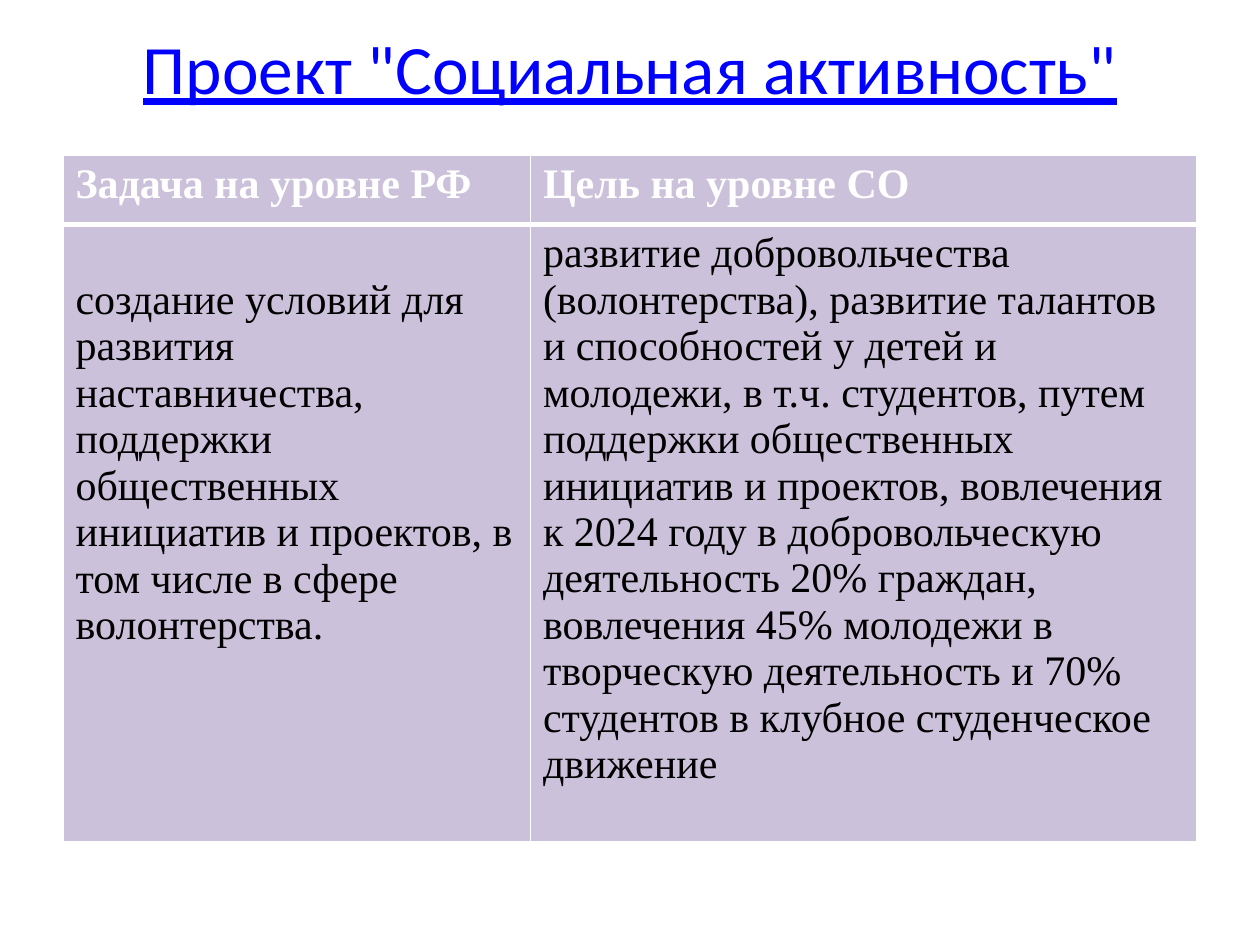
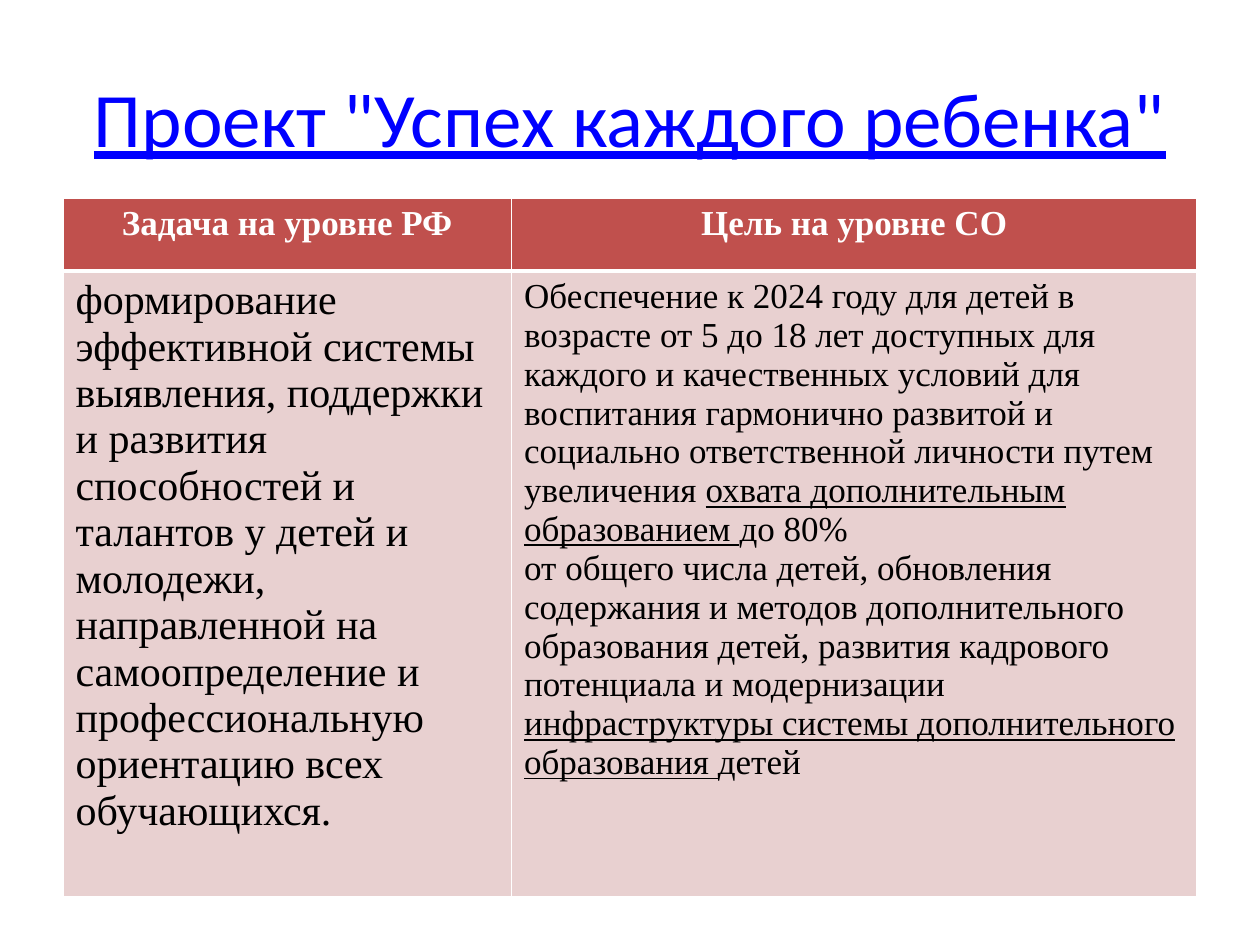
from dataclasses import dataclass

from lxml import etree
from pptx import Presentation
from pptx.dml.color import RGBColor
from pptx.enum.text import MSO_ANCHOR, PP_ALIGN
from pptx.oxml.ns import qn
from pptx.util import Inches, Pt

LEFT, CENTER, JUSTIFY = PP_ALIGN.LEFT, PP_ALIGN.CENTER, PP_ALIGN.JUSTIFY
TOP, MIDDLE = MSO_ANCHOR.TOP, MSO_ANCHOR.MIDDLE


@dataclass(frozen=True)
class Theme:
    title_font: str = "Calibri"
    table_font: str = "Times New Roman"
    title_color: str = "0000FF"
    white: str = "FFFFFF"
    black: str = "000000"
    lilac: str = "CCC1DA"
    red: str = "C0504D"
    pink: str = "E8D0D0"
    large: int = 24
    small: int = 20
    thin_border: int = 1
    header_border: int = 3


THEME = Theme()
SIDE, CONTENT_WIDTH = 0.5, 9
LINE_HEIGHT = 0.37
HEADERS = ["Задача на уровне РФ", "Цель на уровне СО"]

# Each body cell: type size, extra space above, list of (text, underlined)
projects = [
    {
        "title": 'Проект "Социальная активность"',
        "title_size": 39.6, "title_top": 0.2, "title_height": 1.09, "title_anchor": TOP,
        "table_top": 1.23, "columns": [3.71, 5.29], "rows": [0.55, 4.89],
        "header_fill": THEME.lilac, "body_fill": THEME.lilac,
        "header_size": THEME.large, "header_align": JUSTIFY,
        "body": [
            (THEME.large, LINE_HEIGHT, [
                ("создание условий для развития наставничества, поддержки общественных "
                 "инициатив и проектов, в том числе в сфере волонтерства.", False)]),
            (THEME.large, 0, [
                ("развитие добровольчества (волонтерства), развитие талантов и способностей "
                 "у детей и молодежи, в т.ч. студентов, путем поддержки общественных "
                 "инициатив и проектов, вовлечения к 2024 году в добровольческую "
                 "деятельность 20% граждан, вовлечения 45% молодежи в творческую "
                 "деятельность и 70% студентов в клубное студенческое движение", False)]),
        ],
    },
    {
        "title": 'Проект "Успех каждого ребенка"',
        "title_size": 44, "title_top": 0.3, "title_height": 1.25, "title_anchor": MIDDLE,
        "table_top": 1.57, "columns": [3.56, 5.44], "rows": [0.58, 4.97],
        "header_fill": THEME.red, "body_fill": THEME.pink,
        "header_size": THEME.small, "header_align": CENTER,
        "body": [
            (THEME.large, 0, [
                ("формирование эффективной системы выявления, поддержки и развития "
                 "способностей и талантов у детей и молодежи, направленной на "
                 "самоопределение и профессиональную ориентацию всех обучающихся.", False)]),
            (THEME.small, 0, [
                ("Обеспечение к 2024 году для детей в возрасте от 5 до 18 лет доступных для "
                 "каждого и качественных условий для воспитания гармонично развитой и "
                 "социально ответственной личности путем увеличения ", False),
                ("охвата дополнительным образованием ", True),
                ("до 80%\nот общего числа детей, обновления содержания и методов "
                 "дополнительного образования детей, развития кадрового потенциала и "
                 "модернизации ", False),
                ("инфраструктуры системы дополнительного образования ", True),
                ("детей", False)]),
        ],
    },
]


def write(paragraph, pieces, font, size, color, align, bold=False):
    """Add (text, underlined) pieces as runs; a newline becomes a line break."""
    paragraph.alignment = align
    for text, underlined in pieces:
        for index, line in enumerate(text.split("\n")):
            if index:
                paragraph.add_line_break()
            run = paragraph.add_run()
            run.text = line
            run.font.name = font
            run.font.size = Pt(size)
            run.font.bold = bold
            run.font.underline = underlined
            run.font.color.rgb = RGBColor.from_string(color)


def style_cell(cell, fill, top, bottom):
    """Fill a cell and give it white borders, with top and bottom widths in points."""
    cell.fill.solid()
    cell.fill.fore_color.rgb = RGBColor.from_string(fill)
    properties = cell._tc.get_or_add_tcPr()
    widths = {"a:lnL": THEME.thin_border, "a:lnR": THEME.thin_border,
              "a:lnT": top, "a:lnB": bottom}
    for position, (tag, width) in enumerate(widths.items()):
        border = etree.Element(qn(tag), w=str(Pt(width)))
        color = etree.SubElement(border, qn("a:solidFill"))
        etree.SubElement(color, qn("a:srgbClr"), val=THEME.white)
        properties.insert(position, border)


deck = Presentation()
deck.slide_width, deck.slide_height = Inches(10), Inches(7.5)
blank_layout = deck.slide_layouts[6]

for project in projects:
    slide = deck.slides.add_slide(blank_layout)

    title = slide.shapes.add_textbox(
        Inches(SIDE), Inches(project["title_top"]),
        Inches(CONTENT_WIDTH), Inches(project["title_height"])).text_frame
    title.word_wrap = True
    title.vertical_anchor = project["title_anchor"]
    if project["title_anchor"] == TOP:
        title.margin_top = 0
    write(title.paragraphs[0], [(project["title"], True)], THEME.title_font,
          project["title_size"], THEME.title_color, CENTER)

    goals = slide.shapes.add_table(
        2, 2, Inches(SIDE), Inches(project["table_top"]),
        Inches(CONTENT_WIDTH), Inches(sum(project["rows"]))).table
    goals.horz_banding = False
    for row, height in zip(goals.rows, project["rows"]):
        row.height = Inches(height)

    for index, (width, header, body) in enumerate(
            zip(project["columns"], HEADERS, project["body"])):
        goals.columns[index].width = Inches(width)

        header_cell = goals.cell(0, index)
        style_cell(header_cell, project["header_fill"],
                   THEME.thin_border, THEME.header_border)
        write(header_cell.text_frame.paragraphs[0], [(header, False)], THEME.table_font,
              project["header_size"], THEME.white, project["header_align"], bold=True)

        size, space_above, pieces = body
        body_cell = goals.cell(1, index)
        style_cell(body_cell, project["body_fill"],
                   THEME.header_border, THEME.thin_border)
        body_cell.margin_top = Inches(0.05 + space_above)
        write(body_cell.text_frame.paragraphs[0], pieces, THEME.table_font,
              size, THEME.black, LEFT)

deck.save("out.pptx")
